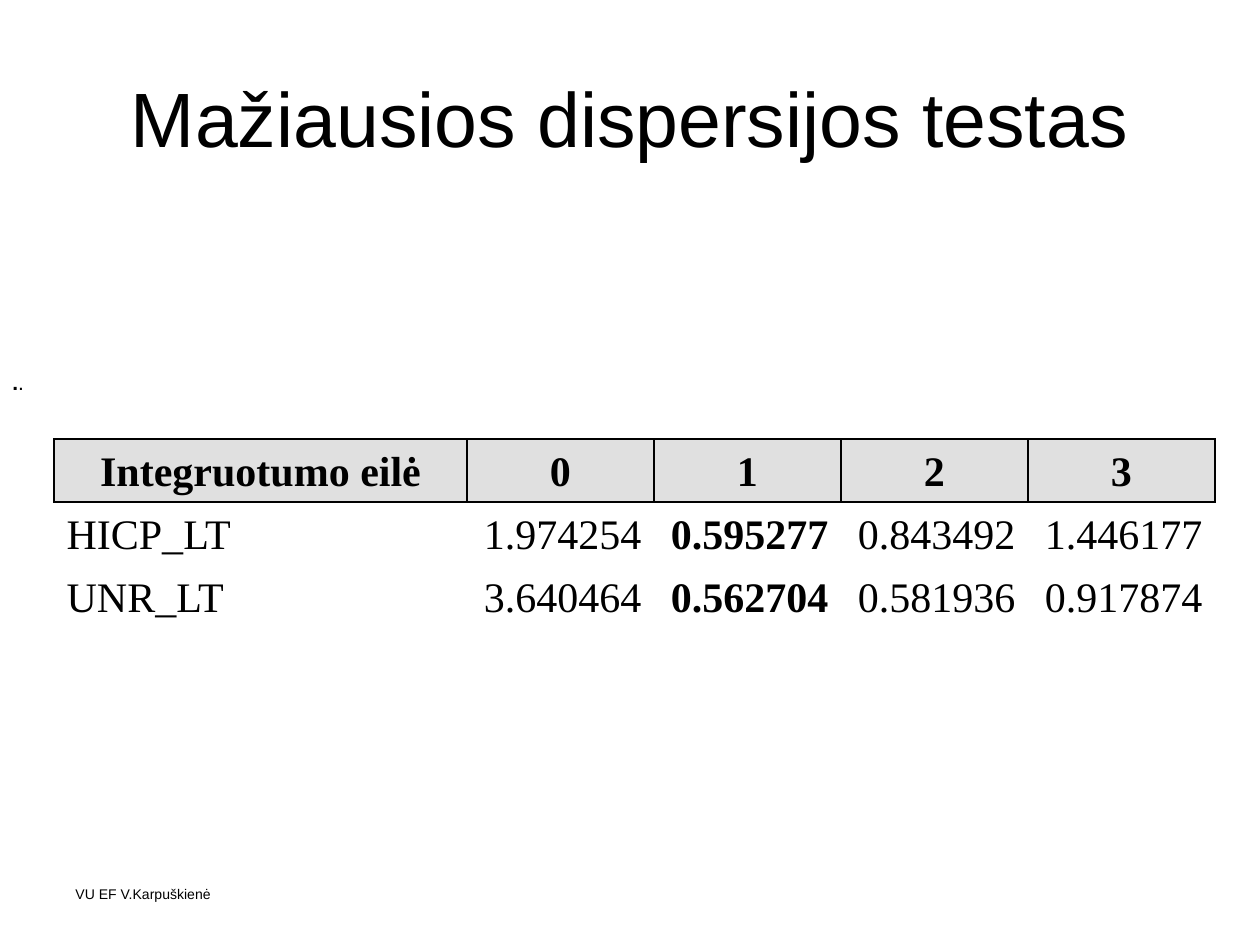
from dataclasses import dataclass

from lxml.etree import SubElement
from pptx import Presentation
from pptx.dml.color import RGBColor
from pptx.enum.text import MSO_ANCHOR as Anchor, PP_ALIGN as Align
from pptx.oxml.ns import qn
from pptx.util import Emu, Pt

PX = 914400 // 126


@dataclass(frozen=True)
class Theme:
    ink: str = "000000"
    header_fill: str = "E0E0E0"
    sans: str = "Arial"
    serif: str = "Times New Roman"
    title_size: int = 44
    table_size: int = 24
    mark_size: int = 12
    footer_size: int = 8
    border_width: int = 1


class SlideBuilder:
    """Draws styled elements on the current slide, with lengths in px."""

    def __init__(self, slide, theme):
        self.slide = slide
        self.theme = theme

    def style(self, run, size, font=None, bold=False):
        run.font.name = font or self.theme.sans
        run.font.size = Pt(size)
        run.font.bold = bold
        run.font.color.rgb = RGBColor.from_string(self.theme.ink)

    def title(self, text, left, top, width, height):
        shape = self.slide.shapes.title
        shape.left, shape.top, shape.width, shape.height = (
            Emu(value * PX) for value in (left, top, width, height))
        shape.text_frame.text = text
        shape.text_frame.vertical_anchor = Anchor.MIDDLE
        paragraph = shape.text_frame.paragraphs[0]
        paragraph.alignment = Align.CENTER
        self.style(paragraph.runs[0], self.theme.title_size)

    def text(self, parts, left, top, width, height, size, anchor=Anchor.TOP, wrap=True):
        shape = self.slide.shapes.add_textbox(
            *(Emu(value * PX) for value in (left, top, width, height)))
        shape.text_frame.word_wrap = wrap
        shape.text_frame.vertical_anchor = anchor
        paragraph = shape.text_frame.paragraphs[0]
        for text, bold in parts:
            run = paragraph.add_run()
            run.text = text
            self.style(run, size, bold=bold)

    def borders(self, cell, visible_sides):
        properties = cell._tc.get_or_add_tcPr()
        for side in "LRTB":
            line = SubElement(properties, qn(f"a:ln{side}"), w=str(Pt(self.theme.border_width)))
            if side in visible_sides:
                fill = SubElement(line, qn("a:solidFill"))
                SubElement(fill, qn("a:srgbClr"), val=self.theme.ink)
            else:
                SubElement(line, qn("a:noFill"))

    def cell(self, cell, text, alignment, bold, sides, fill=None):
        cell.text_frame.text = text
        cell.vertical_anchor = Anchor.BOTTOM
        paragraph = cell.text_frame.paragraphs[0]
        paragraph.alignment = alignment
        self.style(paragraph.runs[0], self.theme.table_size, self.theme.serif, bold)
        self.borders(cell, sides)
        if fill:
            cell.fill.solid()
            cell.fill.fore_color.rgb = RGBColor.from_string(fill)
        else:
            cell.fill.background()

    def table(self, rows, left, top, column_widths, row_height, bold_column):
        frame = self.slide.shapes.add_table(
            len(rows), len(column_widths), Emu(left * PX), Emu(top * PX),
            Emu(sum(column_widths) * PX), Emu(len(rows) * row_height * PX))
        table = frame.table
        table.first_row = table.horz_banding = False
        for column, width in zip(table.columns, column_widths):
            column.width = Emu(width * PX)
        for row_index, values in enumerate(rows):
            table.rows[row_index].height = Emu(row_height * PX)
            for column_index, value in enumerate(values):
                cell = table.cell(row_index, column_index)
                if row_index == 0:
                    self.cell(cell, value, Align.CENTER, True, "LRTB", self.theme.header_fill)
                else:
                    alignment = Align.RIGHT if column_index else Align.LEFT
                    sides = "T" if row_index == 1 else ""
                    self.cell(cell, value, alignment, column_index == bold_column, sides)


def main():
    presentation = Presentation()
    presentation.slide_width, presentation.slide_height = Emu(1260 * PX), Emu(945 * PX)
    slide = presentation.slides.add_slide(presentation.slide_layouts[5])
    theme = Theme()
    builder = SlideBuilder(slide, theme)
    builder.text([("VU EF V.Karpuškienė", False)], 63, 861, 294, 65,
                 theme.footer_size, Anchor.MIDDLE)
    builder.title("Mažiausios dispersijos testas", 63, 38, 1134, 158)
    builder.text([(".", True), (".", False)], 0, 363, 38, 76, theme.mark_size, wrap=False)
    builder.table([
        ["Integruotumo eilė", "0", "1", "2", "3"],
        ["HICP_LT", "1.974254", "0.595277", "0.843492", "1.446177"],
        ["UNR_LT", "3.640464", "0.562704", "0.581936", "0.917874"],
    ], 54, 439, [413] + [187] * 4, 63, bold_column=2)
    presentation.save("out.pptx")


if __name__ == "__main__":
    main()
